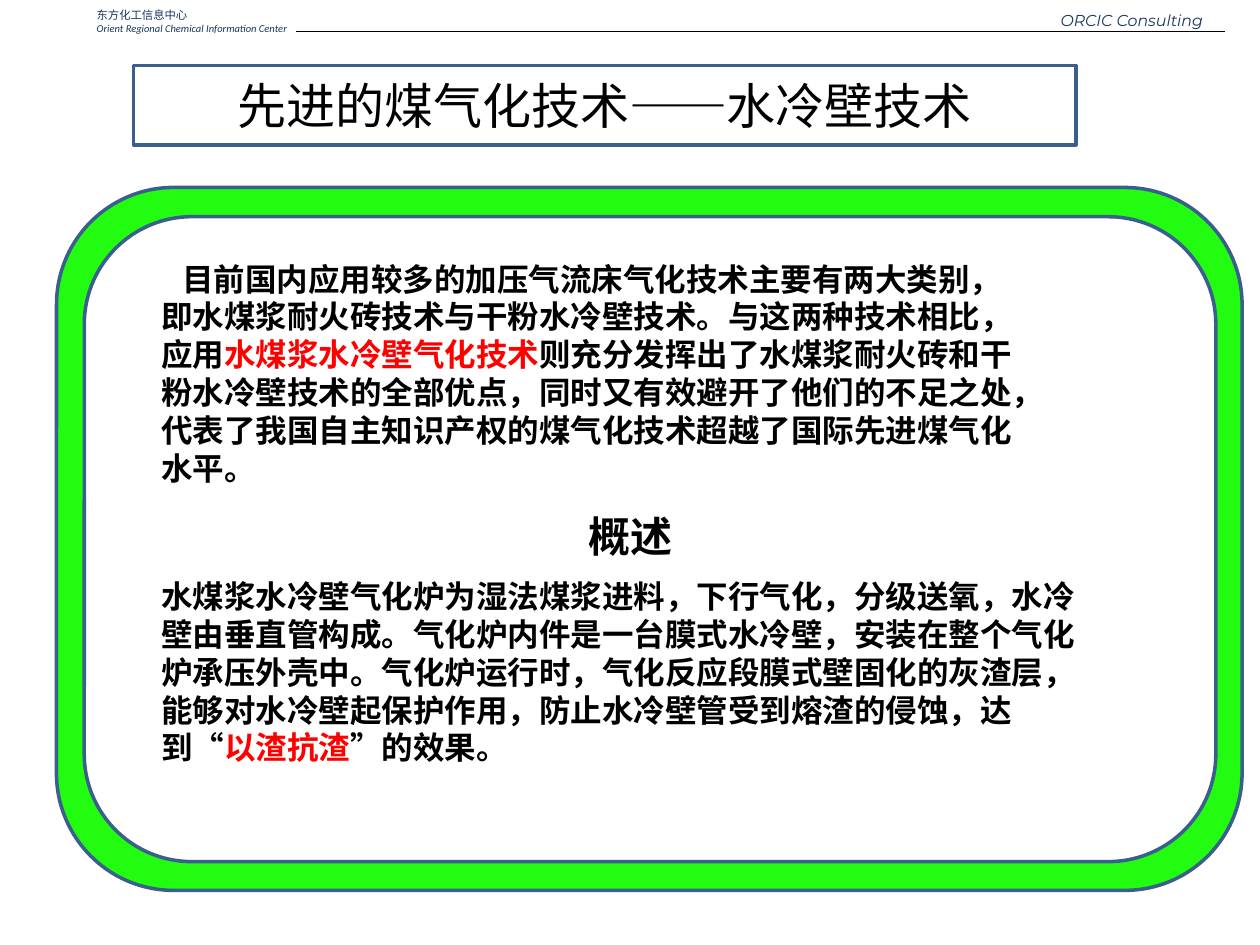
from lxml.etree import SubElement
from pptx import Presentation
from pptx.dml.color import RGBColor
from pptx.enum.lang import MSO_LANGUAGE_ID as Language
from pptx.enum.shapes import MSO_CONNECTOR as Connector, MSO_SHAPE as Preset
from pptx.enum.text import MSO_ANCHOR as Anchor, MSO_AUTO_SIZE as AutoSize, PP_ALIGN as Align
from pptx.oxml.ns import qn
from pptx.util import Cm, Pt

BLACK = RGBColor(0x00, 0x00, 0x00)
WHITE = RGBColor(0xFF, 0xFF, 0xFF)
RED = RGBColor(0xFF, 0x00, 0x00)
GREEN = RGBColor(0x21, 0xFC, 0x10)
NAVY = RGBColor(0x17, 0x37, 0x5E)
BORDER = RGBColor(0x3A, 0x5F, 0x8C)
HAN_SC = "Noto Sans CJK SC"
HAN_JP = "Noto Sans CJK JP"


def format_run(run, size, face, color=BLACK, bold=False, italic=False):
    """Set the look of one run, with the Han face where one is named."""
    font = run.font
    font.size, font.name, font.bold, font.italic = Pt(size), face, bold, italic
    font.color.rgb = color
    font.language_id = Language.SIMPLIFIED_CHINESE
    if face in (HAN_SC, HAN_JP):
        SubElement(run._r.get_or_add_rPr(), qn("a:ea")).set("typeface", face)


def outline_box(box, fill):
    """Give a box its solid fill and blue border."""
    box.fill.solid()
    box.fill.fore_color.rgb = fill
    box.line.color.rgb = BORDER
    box.line.width = Pt(2)


def add_panel(slide, fill, left, top, width, height):
    """Add one rounded panel."""
    panel = slide.shapes.add_shape(Preset.ROUNDED_RECTANGLE, Cm(left), Cm(top), Cm(width), Cm(height))
    panel.shadow.inherit = False
    outline_box(panel, fill)


def add_text(slide, place, paragraphs, wrap=True, indent=0):
    """Add a text box; each paragraph is a list of (text, run format)."""
    frame = slide.shapes.add_textbox(*map(Cm, place)).text_frame
    frame.word_wrap = wrap
    frame.auto_size = AutoSize.SHAPE_TO_FIT_TEXT
    for number, pieces in enumerate(paragraphs):
        paragraph = frame.add_paragraph() if number else frame.paragraphs[0]
        if indent:
            paragraph._p.get_or_add_pPr().set("indent", str(Cm(indent)))
        for words, look in pieces:
            run = paragraph.add_run()
            run.text = words
            format_run(run, **look)


def add_title(slide, words):
    """Place and format the framed title."""
    title = slide.shapes.title
    title.left, title.top, title.width, title.height = Cm(2.69), Cm(1.32), Cm(19), Cm(1.6)
    outline_box(title, WHITE)
    frame = title.text_frame
    frame.text = words
    frame.auto_size = AutoSize.NONE
    frame.vertical_anchor = Anchor.MIDDLE
    frame.paragraphs[0].alignment = Align.CENTER
    format_run(frame.paragraphs[0].runs[0], 28, HAN_JP)


def add_header(slide):
    """Add the organisation names and the rule below them."""
    add_text(slide, (1.7, 0.05, 12.5, 0.79), [
        [("东方化工信息中心", dict(size=6.5, face=HAN_SC, color=NAVY))],
        [("Orient Regional Chemical Information Center",
          dict(size=6, face="Calibri", color=NAVY, italic=True))],
    ])
    rule = slide.shapes.add_connector(Connector.STRAIGHT, Cm(5.97), Cm(0.63), Cm(24.69), Cm(0.63))
    rule.line.color.rgb = BLACK
    rule.line.width = Pt(0.01)
    SubElement(rule._element.spPr, qn("a:effectLst"))
    add_text(slide, (21.13, 0.1, 3.73, 0.64), [
        [("ORCIC Consulting", dict(size=9, face="Montserrat", color=NAVY, italic=True))],
    ], wrap=False)


def main():
    """Build the slide and save it."""
    deck = Presentation()
    deck.slide_width, deck.slide_height = Cm(25.4), Cm(19.05)
    slide = deck.slides.add_slide(deck.slide_layouts[5])

    add_header(slide)
    add_title(slide, "先进的煤气化技术——水冷壁技术")
    add_panel(slide, GREEN, 1.14, 3.78, 23.9, 14.17)
    add_panel(slide, WHITE, 1.7, 4.37, 22.81, 13)

    plain = dict(size=18, face="Calibri", bold=True)
    accent = dict(plain, color=RED)
    add_text(slide, (3, 5.11, 17.81, 4.88), [[
        ("目前国内应用较多的加压气流床气化技术主要有两大类别，即水煤浆耐火砖技术与干粉水冷壁技术。"
         "与这两种技术相比，应用", plain),
        ("水煤浆水冷壁气化技术", accent),
        ("则充分发挥出了水煤浆耐火砖和干粉水冷壁技术的全部优点，同时又有效避开了他们的不足之处，"
         "代表了我国自主知识产权的煤气化技术超越了国际先进煤气化水平。", plain),
    ]], indent=0.42)
    add_text(slide, (8.31, 10.16, 9.6, 1.27), [[("概述", dict(plain, size=24))]], indent=3.3)
    add_text(slide, (3, 11.51, 19.1, 4.11), [[
        ("水煤浆水冷壁气化炉为湿法煤浆进料，下行气化，分级送氧，水冷壁由垂直管构成。",
         dict(plain, face="Arial")),
        ("气化炉内件是一台膜式水冷壁，安装在整个气化炉承压外壳中。气化炉运行时，"
         "气化反应段膜式壁固化的灰渣层，能够对水冷壁起保护作用，防止水冷壁管受到熔渣的侵蚀，达到“", plain),
        ("以渣抗渣", accent),
        ("”的效果。", plain),
    ]])
    deck.save("out.pptx")


if __name__ == "__main__":
    main()
